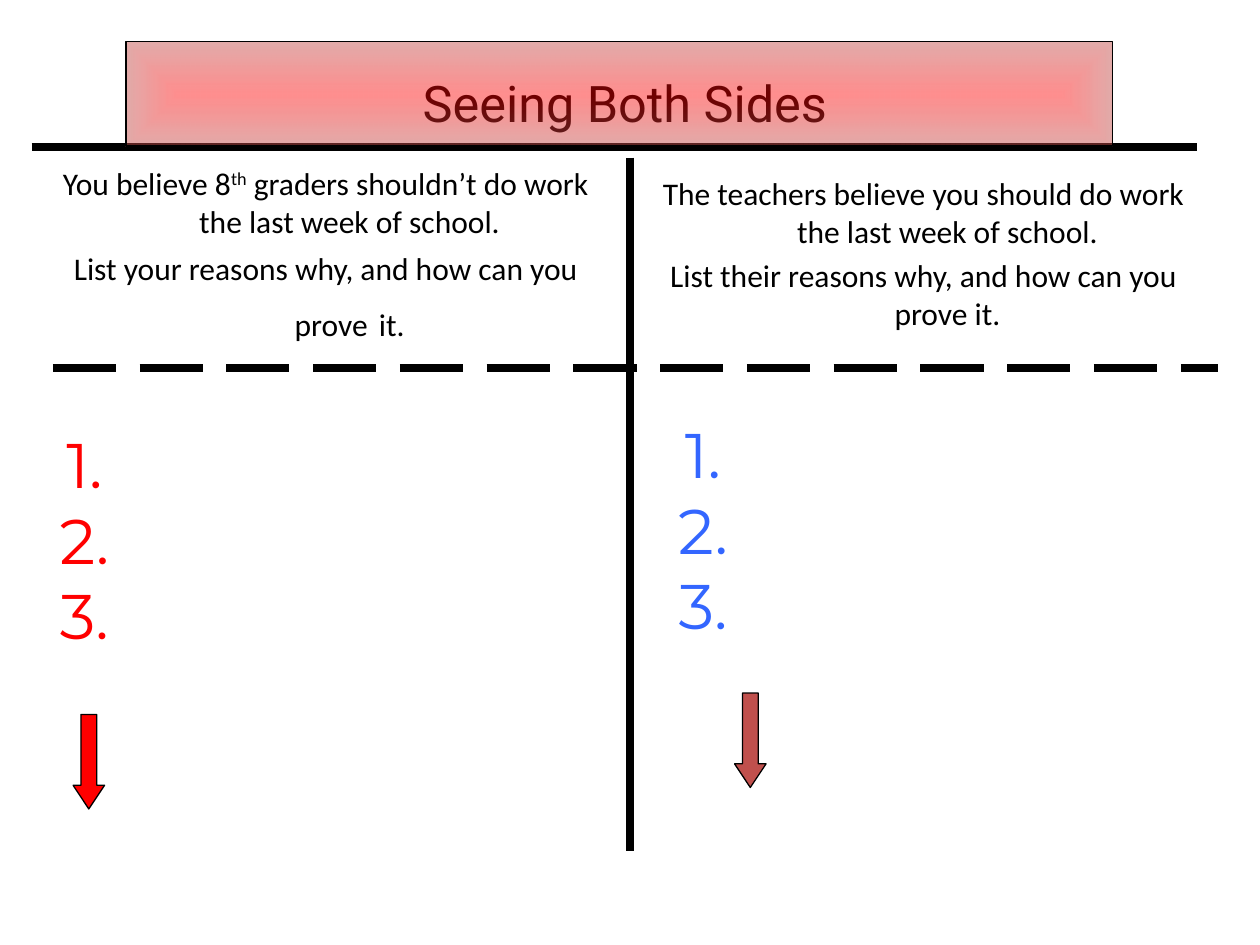
from pptx import Presentation
from pptx.dml.color import RGBColor
from pptx.enum.dml import MSO_LINE
from pptx.enum.shapes import MSO_CONNECTOR, MSO_SHAPE
from pptx.enum.text import MSO_ANCHOR, MSO_AUTO_SIZE, PP_ALIGN
from pptx.oxml import parse_xml
from pptx.oxml.ns import nsdecls, qn
from pptx.oxml.xmlchemy import OxmlElement
from pptx.util import Inches, Pt

BLACK = RGBColor(0, 0, 0)
RED = RGBColor(0xFF, 0, 0)
BLUE = RGBColor(0x33, 0x66, 0xFF)
BRICK = RGBColor(0xC0, 0x50, 0x4D)
CENTER = PP_ALIGN.CENTER
LONG_DASH = MSO_LINE.LONG_DASH
TWO_CONTENT = 3
HANGING = Inches(0.38)

LEFT_PROMPTS = [
    [("You believe 8", 18), ("th", 18, "superscript"),
     (" graders shouldn’t do work the last week of school.", 18)],
    [("List your reasons why, and how can you prove", 18), (" ", 28), ("it.", 18)],
]
RIGHT_PROMPTS = [
    [("The teachers believe you should do work the last week of school.", 18)],
    [("List their reasons why, and how can you prove it.", 18)],
]


def place(item, left, top, width, height):
    item.left, item.top = Inches(left), Inches(top)
    item.width, item.height = Inches(width), Inches(height)


def set_font(font, name, size, color):
    font.name, font.size = name, Pt(size)
    font.color.rgb = color


def add_title(slide, text):
    title = slide.shapes.title
    place(title, 0.42, 0, 9.08, 1.62)
    frame = title.text_frame
    frame.text = text
    frame.auto_size = MSO_AUTO_SIZE.NONE
    frame.vertical_anchor = MSO_ANCHOR.MIDDLE
    heading = frame.paragraphs[0]
    heading.alignment = CENTER
    set_font(heading.runs[0].font, "Roboto", 28.8, BLACK)


def fill_prompts(body, box, prompts):
    """Write centred, unbulleted paragraphs with a hanging indent."""
    place(body, *box)
    frame = body.text_frame
    frame.auto_size = MSO_AUTO_SIZE.NONE
    for number, pieces in enumerate(prompts):
        prompt = frame.add_paragraph() if number else frame.paragraphs[0]
        prompt.alignment = CENTER
        largest = max(piece[1] for piece in pieces)
        prompt.space_before = Pt(0.2 * largest if number else 0)
        properties = prompt._p.get_or_add_pPr()
        properties.set("marL", str(HANGING))
        properties.set("indent", str(-HANGING))
        properties.append(OxmlElement("a:buNone"))
        for text, size, *raised in pieces:
            run = prompt.add_run()
            run.text = text
            set_font(run.font, "Calibri", size, BLACK)
            if raised:
                run._r.get_or_add_rPr().set("baseline", "30000")


def add_rule(slide, start, end, dash=None):
    rule = slide.shapes.add_connector(
        MSO_CONNECTOR.STRAIGHT, *map(Inches, start + end))
    rule.line.color.rgb = BLACK
    rule.line.width = Pt(4.5)
    if dash is not None:
        rule.line.dash_style = dash
    rule._element.spPr.append(OxmlElement("a:effectLst"))


def add_numbers(slide, left, top, color):
    numbers = slide.shapes.add_textbox(
        Inches(left), Inches(top), Inches(0.5), Inches(2.12))
    frame = numbers.text_frame
    frame.word_wrap = False
    frame.margin_left = frame.margin_right = 0
    frame.text = "1.\n2.\n3."
    for line in frame.paragraphs:
        line.alignment = CENTER
        run = line.runs[0]
        set_font(run.font, "Montserrat", 36, color)
        run._r.get_or_add_rPr().insert(0, parse_xml(
            f'<a:ln {nsdecls("a")} w="9525"><a:solidFill>'
            f'<a:srgbClr val="{BLACK}"/></a:solidFill></a:ln>'))


def add_outlined(slide, preset, left, top, width, height):
    shape = slide.shapes.add_shape(
        preset, *map(Inches, (left, top, width, height)))
    shape.shadow.inherit = False
    shape.line.color.rgb = BLACK
    shape.line.width = Pt(0.75)
    return shape


def add_arrow(slide, left, top, color):
    arrow = add_outlined(slide, MSO_SHAPE.DOWN_ARROW, left, top, 0.25, 0.75)
    arrow.adjustments[0], arrow.adjustments[1] = 0.5, 0.75
    arrow.fill.solid()
    arrow.fill.fore_color.rgb = color


def add_banner(slide):
    """Lay a translucent band, glowing from its centre, over the title."""
    banner = add_outlined(slide, MSO_SHAPE.RECTANGLE, 1, 0.33, 7.83, 0.83)
    banner.fill.gradient()
    stops = "".join(
        f'<a:gs pos="{position}"><a:srgbClr val="{color}">'
        f'<a:alpha val="{alpha}"/></a:srgbClr></a:gs>'
        for position, color, alpha in ((0, RED, 44000), (100000, BRICK, 47000)))
    glow = parse_xml(
        f'<a:gradFill {nsdecls("a")} rotWithShape="1"><a:gsLst>{stops}</a:gsLst>'
        '<a:path path="shape"><a:fillToRect l="50000" t="50000" r="50000" b="50000"/>'
        '</a:path></a:gradFill>')
    properties = banner._element.spPr
    properties.replace(properties.find(qn("a:gradFill")), glow)


def main():
    deck = Presentation()
    deck.slide_width, deck.slide_height = Inches(10), Inches(7.5)
    slide = deck.slides.add_slide(deck.slide_layouts[TWO_CONTENT])

    add_title(slide, "Seeing Both Sides")
    fill_prompts(slide.placeholders[1], (0.25, 1.25, 4.67, 5.45), LEFT_PROMPTS)
    fill_prompts(slide.placeholders[2], (5.08, 1.33, 4.5, 5.37), RIGHT_PROMPTS)

    add_rule(slide, (0.25, 1.17), (9.5, 1.17))
    add_rule(slide, (5, 1.25), (5, 6.75))
    add_rule(slide, (0.42, 2.92), (9.67, 2.92), LONG_DASH)

    add_numbers(slide, 0.42, 3.33, RED)
    add_numbers(slide, 5.33, 3.25, BLUE)
    add_arrow(slide, 0.58, 5.67, RED)
    add_arrow(slide, 5.83, 5.5, BRICK)
    add_banner(slide)

    deck.save("out.pptx")


if __name__ == "__main__":
    main()
